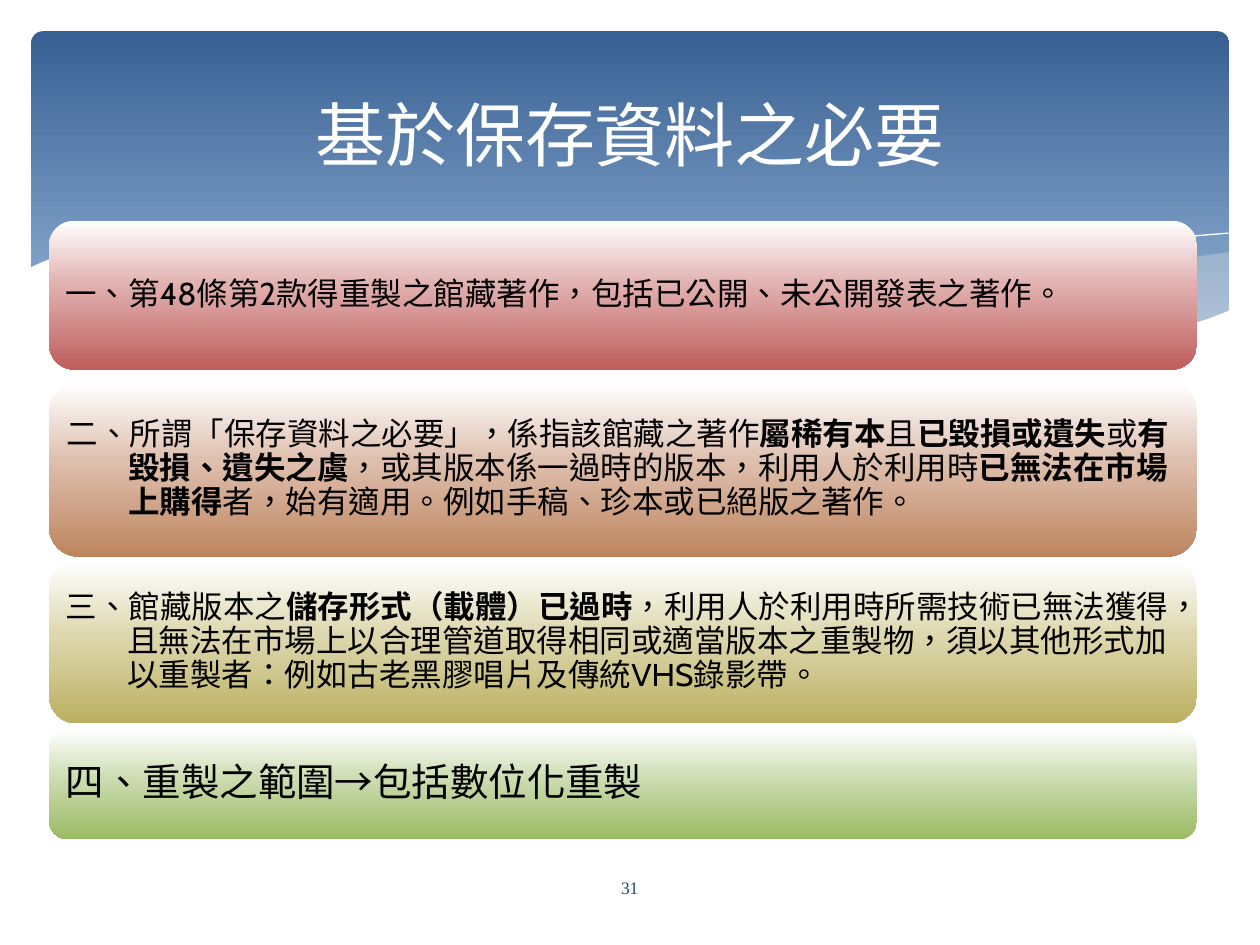
import pptx
import pptx.util
import pptx.dml.color
import pptx.enum.shapes
import pptx.enum.text
import pptx.oxml.ns
import lxml.etree

Cm = pptx.util.Cm
Pt = pptx.util.Pt
qn = pptx.oxml.ns.qn
ALIGN = pptx.enum.text.PP_ALIGN
ROUNDED = pptx.enum.shapes.MSO_SHAPE.ROUNDED_RECTANGLE

COLORS = {
    "white": "FFFFFF", "black": "000000", "cream": "EEECE1", "number": "1F497D",
    "sky_top": "376092", "sky_bottom": "95B3D7",
}
FONT = "Cabin"
TITLE = "基於保存資料之必要"
NUMBER = "31"

CARD_LEFT, CARD_WIDTH = 0.99, 23.14
CARDS = [
    dict(top=4.45, height=3.0, mid="E0AFAE", end="BF5E5C", size=18, inset=0.18, indent=0,
         runs=[("一、第48條第2款得重製之館藏著作，包括已公開、未公開發表之著作。", False)]),
    dict(top=7.72, height=3.5, mid="DFC0AF", end="BD855E", size=18, inset=0.18, indent=1.24,
         runs=[("二、所謂「保存資料之必要」，係指該館藏之著作", False), ("屬稀有本", True),
               ("且", False), ("已毀損或遺失", True), ("或", False),
               ("有毀損、遺失之虞", True),
               ("，或其版本係一過時的版本，利用人於利用時", False),
               ("已無法在市場上購得", True),
               ("者，始有適用。例如手稿、珍本或已絕版之著作。", False)]),
    dict(top=11.33, height=3.25, mid="DED8B0", end="BBB061", size=18, inset=0.18, indent=1.24,
         runs=[("三、館藏版本之", False), ("儲存形式（載體）已過時", True),
               ("，利用人於利用時所需技術已無法獲得，且無法在市場上以合理管道取得相同或"
                "適當版本之重製物，須以其他形式加以重製者：例如古老黑膠唱片及傳統VHS錄影帶。",
                False)]),
    dict(top=14.7, height=2.22, mid="CCDDB1", end="9BB963", size=22, inset=0.23, indent=0,
         runs=[("四、重製之範圍→包括數位化重製", False)]),
]

WAVE_UNIT = Cm(0.0254)
WAVES = [
    dict(fill="cream", alpha=29, points=[
        (975, 200), (948, 204), (921, 210), (891, 216), (861, 223), (805, 237), (753, 248),
        (706, 257), (661, 265), (691, 269), (718, 271), (745, 275), (769, 277), (803, 278),
        (835, 277), (863, 275), (889, 272), (913, 267), (935, 262), (949, 257), (963, 252),
        (976, 247), (976, 200)]),
    dict(fill="cream", alpha=40, points=[
        (893, 273), (866, 269), (807, 260), (741, 248), (668, 231), (613, 218), (569, 208),
        (527, 200), (489, 194), (441, 189), (399, 186), (361, 186), (313, 188), (286, 191),
        (323, 196), (362, 203), (404, 211), (449, 222), (530, 240), (601, 255), (665, 266),
        (722, 274), (773, 278), (807, 279), (848, 278), (876, 275)]),
    dict(line="white", points=[
        (309, 195), (328, 192), (363, 189), (401, 187), (450, 188), (510, 192), (556, 197),
        (608, 204), (665, 213), (727, 226), (795, 242), (868, 261), (907, 272)]),
    dict(line="white", points=[
        (613, 257), (652, 246), (695, 235), (748, 223), (806, 210), (866, 199), (910, 192),
        (951, 187), (975, 185)]),
    dict(fill="white", points=[
        (977, 246), (959, 253), (940, 259), (920, 265), (899, 269), (863, 274), (823, 277),
        (778, 276), (726, 272), (668, 265), (603, 254), (555, 245), (503, 233), (447, 220),
        (391, 207), (339, 197), (292, 191), (250, 186), (211, 184), (161, 184), (119, 187),
        (85, 193), (59, 199), (46, 203), (36, 207), (29, 210), (23, 213), (23, 329),
        (977, 329)]),
]


def rgb(name):
    return pptx.dml.color.RGBColor.from_string(COLORS.get(name, name))


def add_gradient_panel(slide, box, radius, stops):
    sp = slide.shapes.add_shape(ROUNDED, *map(Cm, box))
    sp.adjustments[0] = radius
    sp.shadow.inherit = False
    sp.line.fill.background()
    sp.fill.gradient()
    sp.fill.gradient_angle = 270
    stop_list = next(sp._element.spPr.iter(qn("a:gsLst")))
    for gs in list(stop_list):
        stop_list.remove(gs)
    for position, color in stops:
        gs = lxml.etree.SubElement(stop_list, qn("a:gs"), pos=str(position * 1000))
        lxml.etree.SubElement(gs, qn("a:srgbClr"), val=color)
    return sp


def add_wave(slide, points, fill=None, alpha=None, line=None):
    builder = slide.shapes.build_freeform(*points[0], scale=WAVE_UNIT)
    builder.add_line_segments(points[1:], close=fill is not None)
    sp = builder.convert_to_shape()
    sp.shadow.inherit = False
    if fill:
        sp.fill.solid()
        sp.fill.fore_color.rgb = rgb(fill)
        sp.line.fill.background()
    else:
        sp.fill.background()
        sp.line.color.rgb = rgb(line)
        sp.line.width = Pt(0)
    if alpha:
        clr = next(sp._element.spPr.iter(qn("a:srgbClr")))
        lxml.etree.SubElement(clr, qn("a:alpha"), val=str(alpha * 1000))


def write(sp, runs, size, color, font=FONT, align=ALIGN.CENTER):
    tf = sp.text_frame
    tf.word_wrap = True
    tf.vertical_anchor = pptx.enum.text.MSO_ANCHOR.MIDDLE
    p = tf.paragraphs[0]
    p.alignment = align
    p.font.size = Pt(size)
    p.font.name = font
    p.font.color.rgb = rgb(color)
    for text, bold in runs:
        r = p.add_run()
        r.text = text
        r.font.bold = bold
        r._r.get_or_add_rPr().set("lang", "zh-TW")
    return p


def add_card(slide, card):
    box = (CARD_LEFT, card["top"], CARD_WIDTH, card["height"])
    stops = [(0, COLORS["white"]), (44, card["mid"]), (100, card["end"])]
    sp = add_gradient_panel(slide, box, 0.17, stops)
    tf = sp.text_frame
    tf.margin_left = tf.margin_right = tf.margin_top = tf.margin_bottom = Cm(card["inset"])
    p = write(sp, card["runs"], card["size"], "black", align=ALIGN.LEFT)
    p.line_spacing = 0.9
    p.space_after = Pt(round(card["size"] * 0.35))
    if card["indent"]:
        pPr = p._p.get_or_add_pPr()
        pPr.set("marL", str(Cm(card["indent"])))
        pPr.set("indent", str(-Cm(card["indent"])))


def main():
    prs = pptx.Presentation()
    prs.slide_width, prs.slide_height = Cm(25.4), Cm(19.05)
    s = prs.slides.add_slide(prs.slide_layouts[6])
    add_gradient_panel(s, (0.63, 0.63, 24.15, 6.86), 0.034,
                       [(0, COLORS["sky_top"]), (90, COLORS["sky_bottom"])])
    for wave in WAVES:
        add_wave(s, **wave)
    for card in CARDS:
        add_card(s, card)
    title = s.shapes.add_textbox(Cm(1.27), Cm(0.95), Cm(22.86), Cm(3.48))
    write(title, [(TITLE, False)], 40, "white")
    number = s.shapes.add_textbox(Cm(11.08), Cm(17.38), Cm(3.23), Cm(1.01))
    write(number, [(NUMBER, False)], 10, "number", font="Times New Roman")
    prs.save("out.pptx")


if __name__ == "__main__":
    main()
